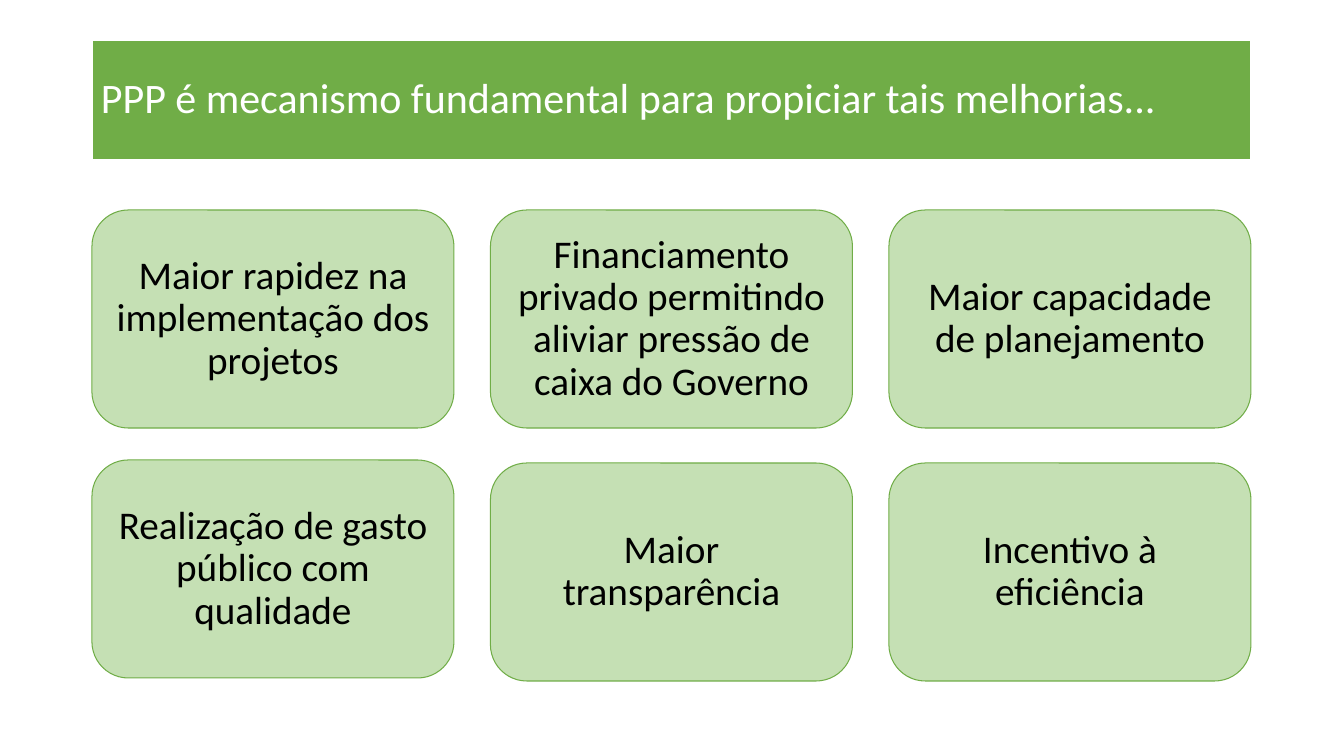
from pptx import Presentation
from pptx.dml.color import RGBColor
from pptx.enum.shapes import MSO_SHAPE
from pptx.enum.text import MSO_ANCHOR, MSO_AUTO_SIZE, PP_ALIGN
from pptx.util import Emu, Pt

TITLE = "PPP é mecanismo fundamental para propiciar tais melhorias..."
BENEFITS = [
    ["Maior rapidez na implementação dos projetos",
     "Financiamento privado permitindo aliviar pressão de caixa do Governo",
     "Maior capacidade de planejamento"],
    ["Realização de gasto público com qualidade",
     "Maior transparência",
     "Incentivo à eficiência"],
]
ROW_TOPS = [[210, 210, 210], [460, 463, 463]]
COLORS = {"green": "70AD47", "light": "C5E0B4", "white": "FFFFFF", "black": "000000"}
FONT = "Calibri"
SLIDE_W, SLIDE_H = 1344, 756
LEFT, WIDTH = 92, 1159
TITLE_TOP, TITLE_H = 40, 120
CARD_W, CARD_H = 362, 218


def px(n):
    return Emu(round(n * 12192000 / SLIDE_W))


def color(name):
    return RGBColor.from_string(COLORS[name])


def paint(sp, fill, line, line_width):
    sp.fill.solid()
    sp.fill.fore_color.rgb = color(fill)
    sp.line.color.rgb = color(line)
    sp.line.width = Pt(line_width)


def write(sp, text, size, font_color, align, inset_x, inset_y):
    tf = sp.text_frame
    tf.word_wrap = True
    tf.auto_size = MSO_AUTO_SIZE.NONE
    tf.vertical_anchor = MSO_ANCHOR.MIDDLE
    tf.margin_left = tf.margin_right = px(inset_x)
    tf.margin_top = tf.margin_bottom = px(inset_y)
    p = tf.paragraphs[0]
    p.alignment = align
    p.line_spacing = 0.9
    r = p.add_run()
    r.text = text
    r.font.name = FONT
    r.font.size = Pt(size)
    r.font.color.rgb = color(font_color)


def main():
    prs = Presentation()
    prs.slide_width, prs.slide_height = px(SLIDE_W), px(SLIDE_H)
    s = prs.slides.add_slide(prs.slide_layouts[5])

    title = s.shapes.title
    title.left, title.top = px(LEFT), px(TITLE_TOP)
    title.width, title.height = px(WIDTH), px(TITLE_H)
    paint(title, "green", "white", 1.5)
    write(title, TITLE, 30, "white", PP_ALIGN.LEFT, 9, 5)

    pitch = (WIDTH - CARD_W) / (len(BENEFITS[0]) - 1)
    for texts, tops in zip(BENEFITS, ROW_TOPS):
        for col, (text, top) in enumerate(zip(texts, tops)):
            card = s.shapes.add_shape(MSO_SHAPE.ROUNDED_RECTANGLE, px(LEFT + col * pitch),
                                      px(top), px(CARD_W), px(CARD_H))
            card.shadow.inherit = False
            paint(card, "light", "green", 0.75)
            write(card, text, 28, "black", PP_ALIGN.CENTER, 12, 12)

    prs.save("out.pptx")


if __name__ == "__main__":
    main()
